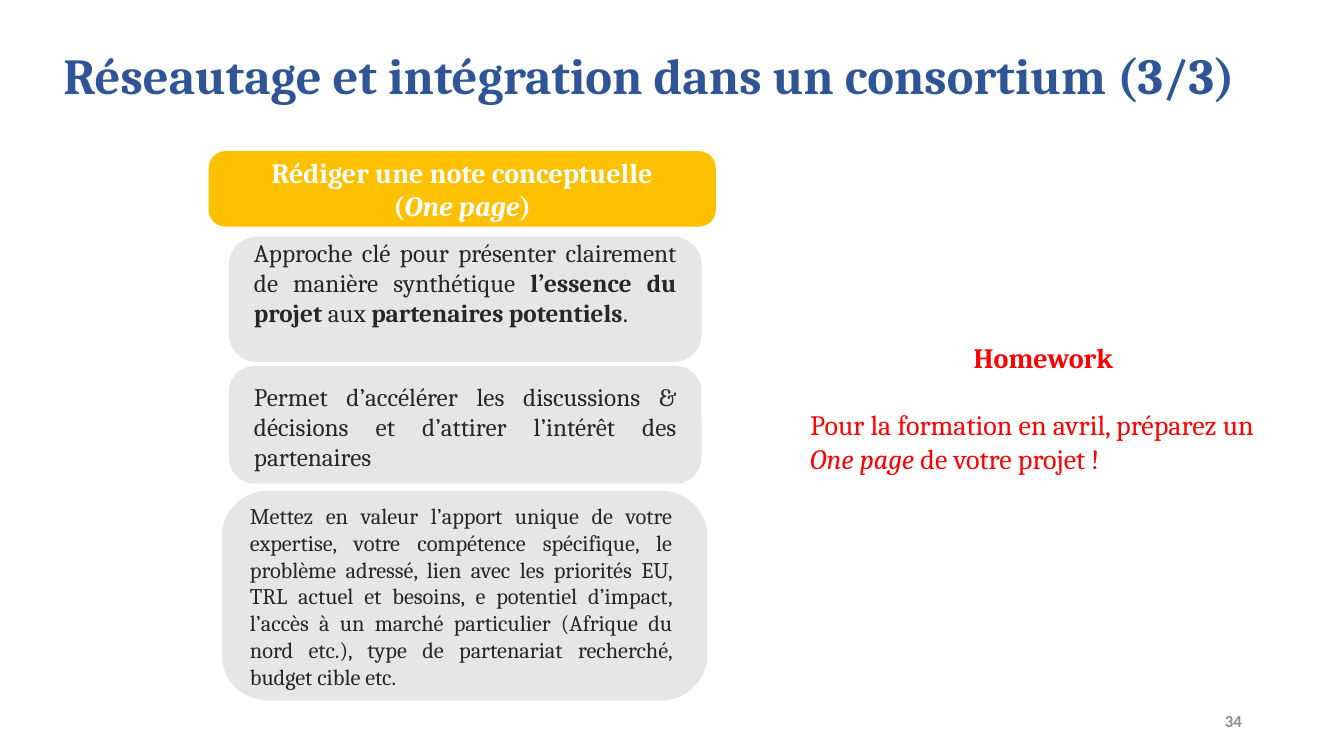
from pptx import Presentation
from pptx.dml.color import RGBColor
from pptx.enum import shapes, text
from pptx.util import Cm, Pt

BLUE = RGBColor(0x2F, 0x55, 0x97)
GOLD = RGBColor(0xFF, 0xC0, 0x00)
PALE = RGBColor(0xE7, 0xE6, 0xE6)
DARK = RGBColor(0x27, 0x27, 0x27)
GREY = RGBColor(0x8C, 0x8C, 0x8C)
RED = RGBColor(0xFF, 0x00, 0x00)
WHITE = RGBColor(0xFF, 0xFF, 0xFF)

LEFT, MID, RIGHT, FULL = (text.PP_ALIGN.LEFT, text.PP_ALIGN.CENTER,
                          text.PP_ALIGN.RIGHT, text.PP_ALIGN.JUSTIFY)

# Content: a paragraph is a list of (words, style), style "b" bold, "i" italic
TITLE = [("Réseautage et intégration dans un consortium (3/3)", "b")]
HEAD = [
    [("Rédiger une note conceptuelle", "b")],
    [("(", "b"), ("One page", "bi"), (")", "b")],
]
TASK = [("Homework", "b")]
BRIEF = [("Pour la formation en avril, préparez un ", ""),
         ("One page ", "i"), ("de votre projet !", "")]
NUMBER = [("34", "b")]

# Panels in cm: (left, top, width, height), text (left, top), size, words
PANELS = [
    ((5.77, 5.97, 11.91, 3.15), (6.15, 5.72), 18, [
        ("Approche clé pour présenter clairement de manière synthétique ", ""),
        ("l’essence du projet ", "b"), ("aux ", ""),
        ("partenaires potentiels", "b"), (".", "")]),
    ((5.77, 9.22, 11.91, 2.97), (6.15, 9.35), 18, [
        ("Permet d’accélérer les discussions & décisions et d’attirer "
         "l’intérêt des partenaires", "")]),
    ((5.59, 12.37, 12.24, 5.28), (6.05, 12.4), 16, [
        ("Mettez en valeur l’apport unique de votre expertise, votre "
         "compétence spécifique, le problème adressé, lien avec les "
         "priorités EU, TRL actuel et besoins, e potentiel d’impact, "
         "l’accès à un marché particulier (Afrique du nord etc.), type de "
         "partenariat recherché, budget cible etc.", "")]),
]
TEXT_SIZE = (11.15, 1.14)

deck = Presentation()
deck.slide_width, deck.slide_height = Cm(33.87), Cm(19.05)
slide = deck.slides.add_slide(deck.slide_layouts[6])


def write(par, runs, size, color, align, font="Cambria"):
    par.alignment = align
    for words, style in runs:
        run = par.add_run()
        run.text = words
        run.font.name, run.font.size = font, Pt(size)
        run.font.bold, run.font.italic = "b" in style, "i" in style
        run.font.color.rgb = color


def set_frame(frame, middle=False, pad=None):
    frame.word_wrap = True
    frame.vertical_anchor = (text.MSO_ANCHOR.MIDDLE if middle
                             else text.MSO_ANCHOR.TOP)
    if pad is not None:
        frame.margin_left = frame.margin_right = Cm(pad)
        frame.margin_top = frame.margin_bottom = Cm(pad)
    return frame


def add_text(place, middle=False, pad=None):
    box = slide.shapes.add_textbox(*map(Cm, place))
    return set_frame(box.text_frame, middle, pad)


def add_panel(place, color):
    panel = slide.shapes.add_shape(
        shapes.MSO_SHAPE.ROUNDED_RECTANGLE, *map(Cm, place))
    panel.adjustments[0] = 0.22
    panel.shadow.inherit = False
    panel.fill.solid()
    panel.fill.fore_color.rgb = color
    panel.line.fill.background()
    return panel


# Title
par = add_text((1.35, 1.02, 31.14, 1.9), middle=True).paragraphs[0]
par.line_spacing = 0.9
write(par, TITLE, 36, BLUE, LEFT)

# Heading of the left column
banner = add_panel((5.26, 3.81, 12.78, 1.9), GOLD)
frame = set_frame(banner.text_frame, middle=True, pad=0.25)
for i, runs in enumerate(HEAD):
    par = frame.add_paragraph() if i else frame.paragraphs[0]
    write(par, runs, 20, WHITE, MID)

# Grey panels
for place, start, size, runs in PANELS:
    add_panel(place, PALE)
    frame = add_text(start + TEXT_SIZE, pad=0.25)
    write(frame.paragraphs[0], runs, size, DARK, FULL)

# Homework
frame = add_text((20.17, 8.46, 12.24, 3.68))
write(frame.paragraphs[0], TASK, 20, RED, MID)
par = frame.add_paragraph()
par.space_before = Pt(24)
write(par, BRIEF, 20, RED, LEFT)

# Slide number
frame = add_text((23.93, 17.65, 7.62, 1.02), middle=True)
write(frame.paragraphs[0], NUMBER, 12, GREY, RIGHT, "Calibri")

deck.save("out.pptx")
